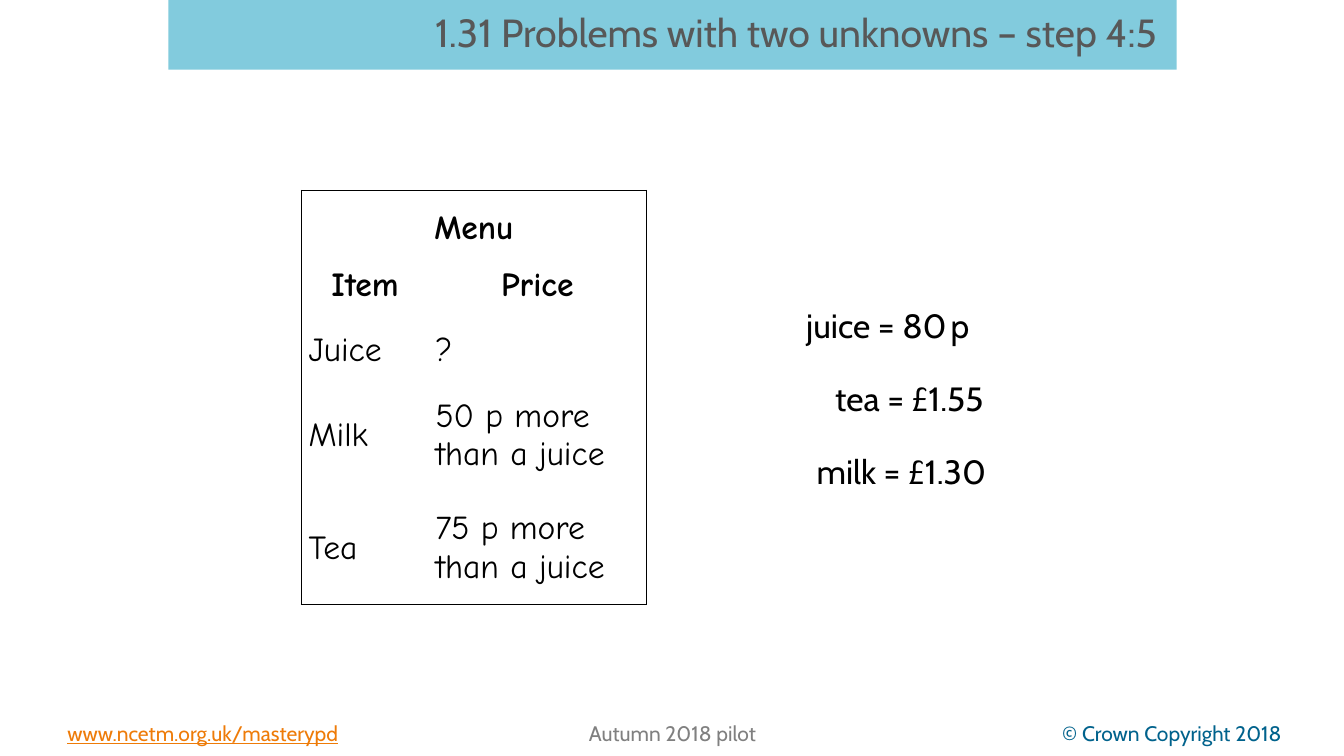
from lxml.etree import SubElement
from pptx import Presentation
from pptx.dml.color import RGBColor
from pptx.enum.text import MSO_ANCHOR, MSO_AUTO_SIZE, PP_ALIGN
from pptx.oxml.ns import qn
from pptx.util import Inches, Pt

BLACK = "000000"
MENU_ROWS = [
    ("Item", "Price"),
    ("Juice", "?"),
    ("Milk", "50 p more than a juice"),
    ("Tea", "75 p more than a juice"),
]
COLUMN_WIDTHS = (1.26, 2.16)
ROW_HEIGHTS = (0.75, 0.56, 0.56, 1.12, 1.12)


def colour(value):
    return RGBColor.from_string(value)


def add_span(para, text, size, value=BLACK, name="Cabin", bold=False, underline=False):
    span = para.add_run()
    span.text = text
    span.font.size = Pt(size)
    span.font.name = name
    span.font.bold = bold
    span.font.underline = underline
    span.font.color.rgb = colour(value)


def add_label(page, left, top, width, height, spans, align, wrap=True):
    box = page.shapes.add_textbox(Inches(left), Inches(top), Inches(width), Inches(height))
    box.text_frame.word_wrap = wrap
    para = box.text_frame.paragraphs[0]
    para.alignment = align
    for text, size, value, underline in spans:
        add_span(para, text, size, value, underline=underline)


def add_footer(page):
    labels = [
        (0.57, "www.ncetm.org.uk/masterypd", "EE7B08", PP_ALIGN.LEFT, True),
        (4.62, "Autumn 2018 pilot", "808080", PP_ALIGN.CENTER, False),
        (8.71, "© Crown Copyright 2018", "00628C", PP_ALIGN.RIGHT, False),
    ]
    for left, text, value, align, underline in labels:
        add_label(page, left, 7.1, 4.1, 0.35, [(text, 15, value, underline)], align)


def set_title(page, text):
    title = page.shapes.title
    title.left, title.top = Inches(1.67), Inches(0)
    title.width, title.height = Inches(10), Inches(0.69)
    title.fill.solid()
    title.fill.fore_color.rgb = colour("82CBDD")
    frame = title.text_frame
    frame.auto_size = MSO_AUTO_SIZE.NONE
    frame.word_wrap = True
    frame.vertical_anchor = MSO_ANCHOR.MIDDLE
    frame.margin_left = frame.margin_right = Inches(0.2)
    frame.margin_top = frame.margin_bottom = Inches(0.05)
    para = frame.paragraphs[0]
    para.alignment = PP_ALIGN.RIGHT
    para.line_spacing = 0.9
    add_span(para, text, 28, "585858")


def set_borders(cell, visible):
    properties = cell._tc.get_or_add_tcPr()
    for side in "LRTB":
        line = SubElement(properties, qn(f"a:ln{side}"), w=str(Pt(1)))
        if side in visible:
            fill = SubElement(line, qn("a:solidFill"))
            SubElement(fill, qn("a:srgbClr"), val=BLACK)
        else:
            SubElement(line, qn("a:noFill"))


def fill_cell(cell, text, bold, anchor):
    cell.fill.background()
    cell.vertical_anchor = anchor
    cell.margin_left = cell.margin_right = Inches(0.07)
    cell.margin_top = cell.margin_bottom = 0
    para = cell.text_frame.paragraphs[0]
    para.alignment = PP_ALIGN.CENTER if bold else PP_ALIGN.LEFT
    para.space_after = Pt(4)
    if text:
        add_span(para, text, 24, name="Comic Neue", bold=bold)


def add_menu(page):
    rows = [("Menu", "")] + MENU_ROWS
    frame = page.shapes.add_table(
        len(rows), 2, Inches(2.99), Inches(1.89),
        Inches(sum(COLUMN_WIDTHS)), Inches(sum(ROW_HEIGHTS)))
    table = frame.table
    table.first_row = table.horz_banding = False
    for column, width in zip(table.columns, COLUMN_WIDTHS):
        column.width = Inches(width)
    for row, height in zip(table.rows, ROW_HEIGHTS):
        row.height = Inches(height)
    table.cell(0, 0).merge(table.cell(0, 1))
    last = len(rows) - 1
    for row_index, texts in enumerate(rows):
        anchor = MSO_ANCHOR.TOP if row_index == 1 else MSO_ANCHOR.MIDDLE
        for column_index, text in enumerate(texts):
            cell = table.cell(row_index, column_index)
            visible = "L" if column_index == 0 else "R"
            if cell.is_merge_origin:
                visible += "R"
            visible += {0: "T", last: "B"}.get(row_index, "")
            set_borders(cell, visible)
            fill_cell(cell, text, row_index < 2, anchor)


def add_answers(page):
    answers = [
        (7.85, 1.91, [("juice = 80", 24), (" ", 12), ("p", 24)]),
        (8.08, 1.88, [("tea = £1.55", 24)]),
        (7.92, 2.04, [("milk = £1.30", 24)]),
    ]
    for index, (left, width, parts) in enumerate(answers):
        spans = [(text, size, BLACK, False) for text, size in parts]
        add_label(page, left, 2.98 + 0.72 * index, width, 0.5, spans,
                  PP_ALIGN.CENTER, wrap=False)


def main():
    deck = Presentation()
    deck.slide_width, deck.slide_height = Inches(13.33), Inches(7.5)
    page = deck.slides.add_slide(deck.slide_layouts[5])
    add_footer(page)
    set_title(page, "1.31 Problems with two unknowns – step 4:5")
    add_answers(page)
    add_menu(page)
    deck.save("out.pptx")


if __name__ == "__main__":
    main()
